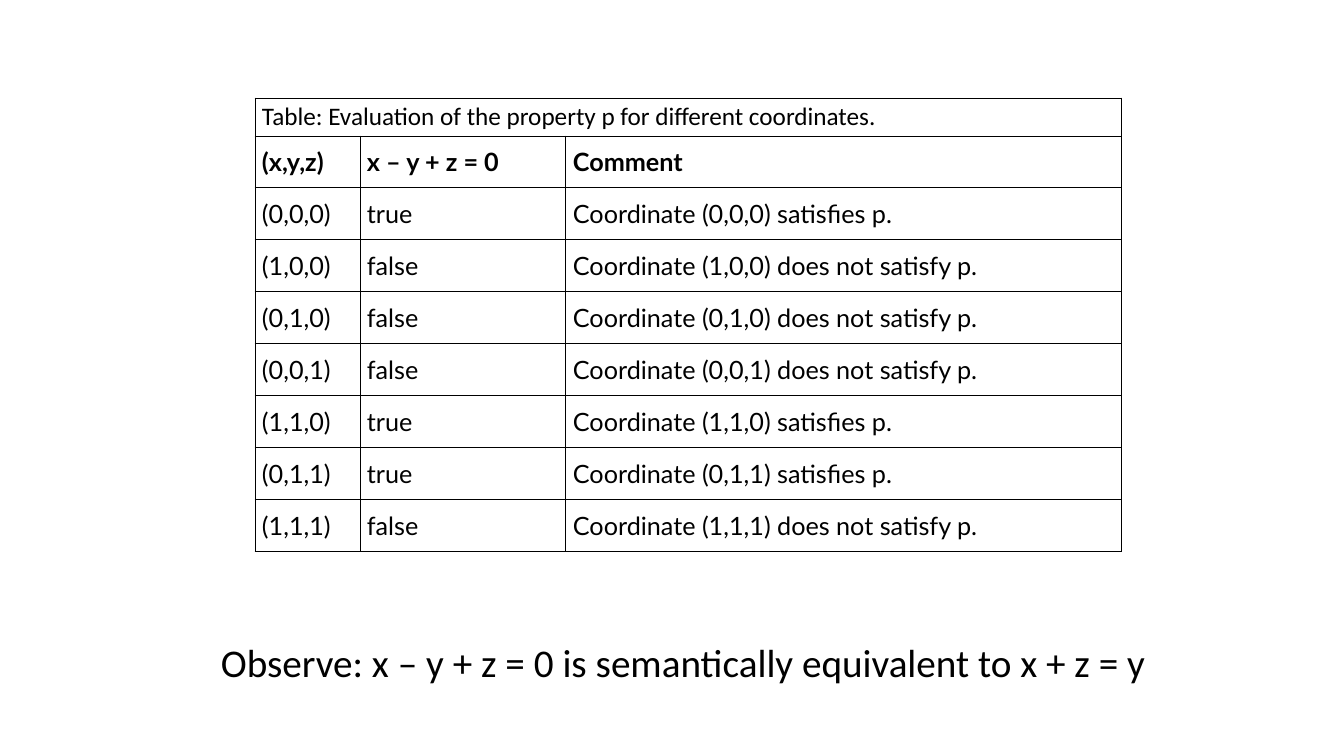
from lxml.etree import SubElement
from pptx import Presentation
from pptx.dml.color import RGBColor
from pptx.enum.text import MSO_ANCHOR
from pptx.oxml.ns import qn
from pptx.util import Pt

CAPTION = "Table: Evaluation of the property p for different coordinates."
HEADER = ("(x,y,z)", "x – y + z = 0", "Comment")
RESULTS = [
    ("(0,0,0)", "true"),
    ("(1,0,0)", "false"),
    ("(0,1,0)", "false"),
    ("(0,0,1)", "false"),
    ("(1,1,0)", "true"),
    ("(0,1,1)", "true"),
    ("(1,1,1)", "false"),
]
VERBS = {"true": "satisfies", "false": "does not satisfy"}
REMARK = "Observe: x – y + z = 0 is semantically equivalent to x + z = y"

BLACK = RGBColor(0, 0, 0)
WHITE = RGBColor(255, 255, 255)
PX = 914400 / 100.8
WIDTH, HEIGHT = 1344, 756
LEFT, TOP = 255, 98
COLS = (105, 206, 556)
CAP_H, ROW_H = 38, 52
PAD, CAP_PAD = 7, 3
REMARK_BOX = (211, 633, 956, 57)


def px(n):
    return round(n * PX)


def style(font, **values):
    for name, value in values.items():
        setattr(font, name, value)
    font.color.rgb = BLACK


def border(cell):
    props = cell._tc.get_or_add_tcPr()
    for i, side in enumerate(("lnL", "lnR", "lnT", "lnB")):
        line = props.makeelement(qn(f"a:{side}"), {"w": str(Pt(0.75))})
        fill = SubElement(line, qn("a:solidFill"))
        SubElement(fill, qn("a:srgbClr"), val=str(BLACK))
        props.insert(i, line)


def fill_cell(cell, text, pad, **font):
    cell.text = text
    cell.vertical_anchor = MSO_ANCHOR.MIDDLE
    cell.margin_left = cell.margin_right = px(PAD)
    cell.margin_top = cell.margin_bottom = px(pad)
    cell.fill.solid()
    cell.fill.fore_color.rgb = WHITE
    border(cell)
    for run in cell.text_frame.paragraphs[0].runs:
        style(run.font, size=Pt(18), **font)


def add_results(slide):
    body = [(point, value, f"Coordinate {point} {VERBS[value]} p.")
            for point, value in RESULTS]
    rows = [(CAPTION, "", ""), HEADER, *body]
    heights = [CAP_H] + [ROW_H] * (len(rows) - 1)
    table = slide.shapes.add_table(
        len(rows), len(COLS), px(LEFT), px(TOP),
        px(sum(COLS)), px(sum(heights))).table
    table.first_row = table.horz_banding = False
    for col, width in zip(table.columns, COLS):
        col.width = px(width)
    for r, (row, height) in enumerate(zip(rows, heights)):
        table.rows[r].height = px(height)
        top = r == 0
        for c, text in enumerate(row):
            fill_cell(table.cell(r, c), text, CAP_PAD if top else PAD,
                      name="Calibri" if top else "Lato", bold=r == 1)
    table.cell(0, 0).merge(table.cell(0, len(COLS) - 1))


def add_remark(slide):
    frame = slide.shapes.add_textbox(*map(px, REMARK_BOX)).text_frame
    frame.word_wrap = True
    run = frame.paragraphs[0].add_run()
    run.text = REMARK
    style(run.font, size=Pt(28), name="Calibri")


def main():
    deck = Presentation()
    deck.slide_width, deck.slide_height = px(WIDTH), px(HEIGHT)
    slide = deck.slides.add_slide(deck.slide_layouts[6])
    add_results(slide)
    add_remark(slide)
    deck.save("out.pptx")


if __name__ == "__main__":
    main()
